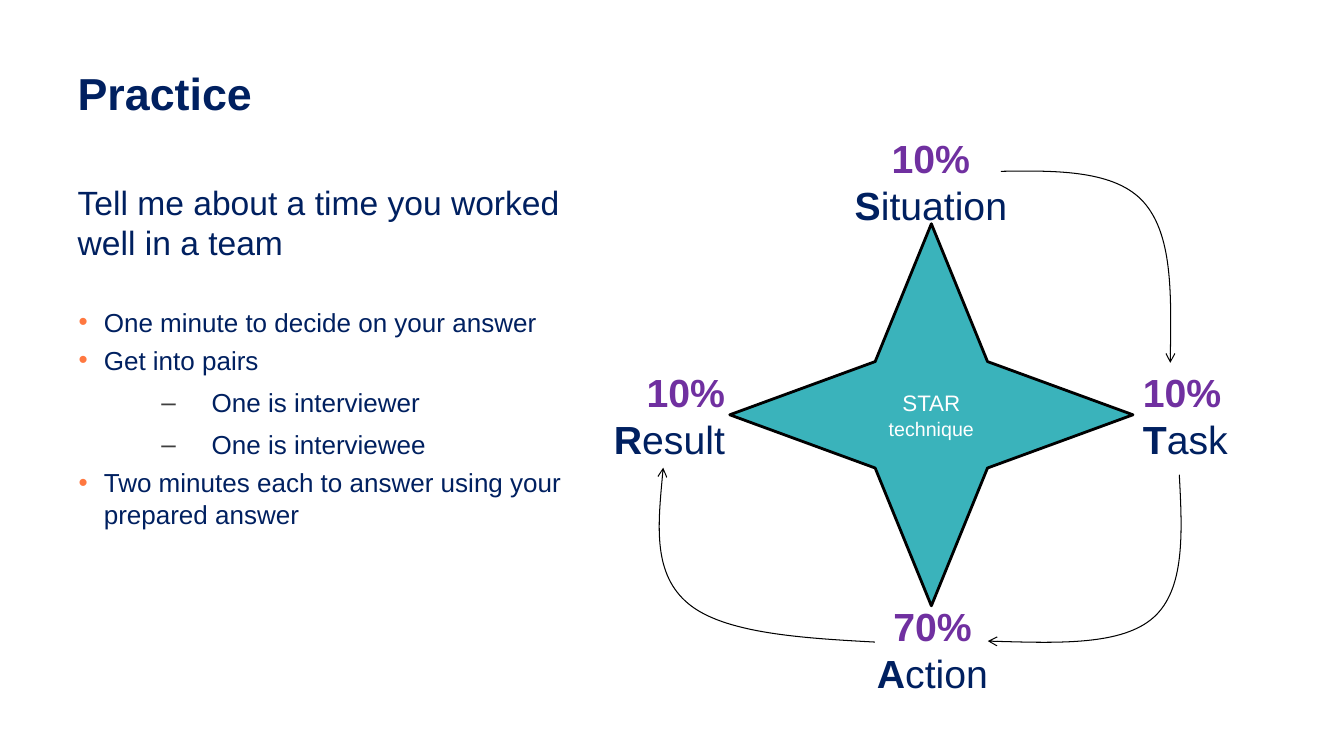
from lxml.etree import SubElement
from pptx import Presentation
from pptx.dml.color import RGBColor
from pptx.enum.shapes import MSO_SHAPE
from pptx.enum.text import MSO_ANCHOR, MSO_AUTO_SIZE, PP_ALIGN
from pptx.oxml.ns import qn
from pptx.util import Inches, Pt

COLORS = {
    "navy": "002060",
    "purple": "7030A0",
    "teal": "3AB3BB",
    "orange": "FF7840",
    "grey": "3F3F3F",
    "black": "000000",
    "white": "FFFFFF",
}

# Bullet formats: level, left margin and hanging indent in inches, space before in points
BULLET = {"level": 0, "margin": 0.26, "hang": 0.25, "before": 4.8, "mark": "•", "color": "orange"}
DASH = {"level": 1, "margin": 1.33, "hang": 0.5, "before": 8, "mark": "–", "color": "grey"}
PROMPT = "Tell me about a time you worked well in a team"
STEPS = [
    ("One minute to decide on your answer", {**BULLET, "before": 31.5}),
    ("Get into pairs", BULLET),
    ("One is interviewer", DASH),
    ("One is interviewee", DASH),
    ("Two minutes each to answer using your prepared answer", BULLET),
]

# Share, word, box (left, top, width, height), alignment
LABELS = [
    ("10%", "Situation", (8.37, 1.28, 1.73, 1.04), PP_ALIGN.CENTER),
    ("10%", "Task", (11.24, 3.6, 1.05, 1.04), PP_ALIGN.LEFT),
    ("70%", "Action", (8.59, 5.93, 1.32, 1.04), PP_ALIGN.CENTER),
    ("10%", "Result", (5.97, 3.6, 1.32, 1.04), PP_ALIGN.RIGHT),
]

# Each arrow is a start point followed by two control points and an end per curve
ARROWS = [
    [(11.7, 4.71), (11.73, 5.28), (11.76, 5.85), (11.44, 6.13),
     (11.13, 6.4), (10.46, 6.38), (9.8, 6.36)],
    [(8.68, 6.37), (7.93, 6.33), (7.18, 6.28), (6.83, 5.99),
     (6.48, 5.7), (6.53, 5.17), (6.58, 4.64)],
    [(9.93, 1.7), (10.5, 1.69), (11.07, 1.69), (11.35, 2.01),
     (11.63, 2.33), (11.62, 2.96), (11.61, 3.6)],
]


def rgb(color):
    return RGBColor.from_string(COLORS[color])


def add_run(paragraph, text, size, color, bold=False):
    run = paragraph.add_run()
    run.text = text
    formats = {"name": "Arial", "size": Pt(size), "bold": bold}
    for attribute, value in formats.items():
        setattr(run.font, attribute, value)
    run.font.color.rgb = rgb(color)


def place(shape, left, top, width, height):
    box = {"left": left, "top": top, "width": width, "height": height}
    for attribute, value in box.items():
        setattr(shape, attribute, Inches(value))


def set_bullet(paragraph, style):
    properties = paragraph._p.get_or_add_pPr()
    properties.set("marL", str(Inches(style["margin"])))
    properties.set("indent", str(-Inches(style["hang"])))
    bullet_color = SubElement(properties, qn("a:buClr"))
    SubElement(bullet_color, qn("a:srgbClr"), val=COLORS[style["color"]])
    SubElement(properties, qn("a:buFont"), typeface="Arial")
    SubElement(properties, qn("a:buChar"), char=style["mark"])
    paragraph.level = style["level"]
    paragraph.space_before = Pt(style["before"])


def fill_title(shape):
    place(shape, 0.67, 0.29, 10.03, 1.25)
    shape.text_frame.vertical_anchor = MSO_ANCHOR.MIDDLE
    paragraph = shape.text_frame.paragraphs[0]
    paragraph.alignment = PP_ALIGN.LEFT
    add_run(paragraph, "Practice", 32, "navy", True)


def fill_body(shape):
    place(shape, 0.67, 1.75, 5.34, 4.95)
    frame = shape.text_frame
    frame.auto_size = MSO_AUTO_SIZE.NONE
    prompt = frame.paragraphs[0]
    properties = prompt._p.get_or_add_pPr()
    properties.set("marL", "0")
    properties.set("indent", "0")
    SubElement(properties, qn("a:buNone"))
    prompt.space_before = Pt(0)
    add_run(prompt, PROMPT, 24, "navy")
    for text, style in STEPS:
        paragraph = frame.add_paragraph()
        set_bullet(paragraph, style)
        add_run(paragraph, text, 18.6, "navy")


def add_star(slide):
    star = slide.shapes.add_shape(
        MSO_SHAPE.STAR_4_POINT, Inches(7.24), Inches(2.22), Inches(4), Inches(3.79))
    star.adjustments[0] = 0.197
    star.shadow.inherit = False
    star.fill.solid()
    star.fill.fore_color.rgb = rgb("teal")
    star.line.color.rgb = rgb("black")
    star.line.width = Pt(2)
    star.text_frame.vertical_anchor = MSO_ANCHOR.MIDDLE
    paragraph = star.text_frame.paragraphs[0]
    paragraph.alignment = PP_ALIGN.CENTER
    add_run(paragraph, "STAR ", 16, "white")
    add_run(paragraph, "technique", 14, "white")


def add_label(slide, share, word, box, alignment):
    label = slide.shapes.add_textbox(*map(Inches, box))
    frame = label.text_frame
    frame.word_wrap = False
    frame.auto_size = MSO_AUTO_SIZE.SHAPE_TO_FIT_TEXT
    share_paragraph, word_paragraph = frame.paragraphs[0], frame.add_paragraph()
    share_paragraph.alignment = word_paragraph.alignment = alignment
    add_run(share_paragraph, share, 28, "purple", True)
    add_run(word_paragraph, word[0], 28, "navy", True)
    add_run(word_paragraph, word[1:], 28, "navy")


def bend_segments(shape, controls):
    """Turn the straight segments of a freeform into cubic curves."""
    segments = list(shape._element.iter(qn("a:lnTo")))
    for number, segment in enumerate(segments):
        segment.tag = qn("a:cubicBezTo")
        for position in (0, 1):
            x, y = controls[3 * number + 1 + position]
            point = SubElement(segment, qn("a:pt"),
                               x=str(Inches(x) - shape.left), y=str(Inches(y) - shape.top))
            segment.insert(position, point)


def add_curved_arrow(slide, controls):
    start, *ends = [tuple(map(Inches, point)) for point in controls[::3]]
    builder = slide.shapes.build_freeform(*start)
    builder.add_line_segments(ends, close=False)
    arrow = builder.convert_to_shape()
    bend_segments(arrow, controls)
    arrow.shadow.inherit = False
    arrow.fill.background()
    arrow.line.color.rgb = rgb("black")
    arrow.line.width = Pt(0.75)
    SubElement(arrow.line._get_or_add_ln(), qn("a:tailEnd"), type="arrow")


def main():
    presentation = Presentation()
    presentation.slide_width = Inches(40 / 3)
    presentation.slide_height = Inches(7.5)
    slide = presentation.slides.add_slide(presentation.slide_layouts[1])

    # Exercise on the left
    fill_title(slide.shapes.title)
    fill_body(slide.placeholders[1])

    # Star diagram on the right
    add_star(slide)
    for label in LABELS:
        add_label(slide, *label)
    for controls in ARROWS:
        add_curved_arrow(slide, controls)

    presentation.save("out.pptx")


if __name__ == "__main__":
    main()
